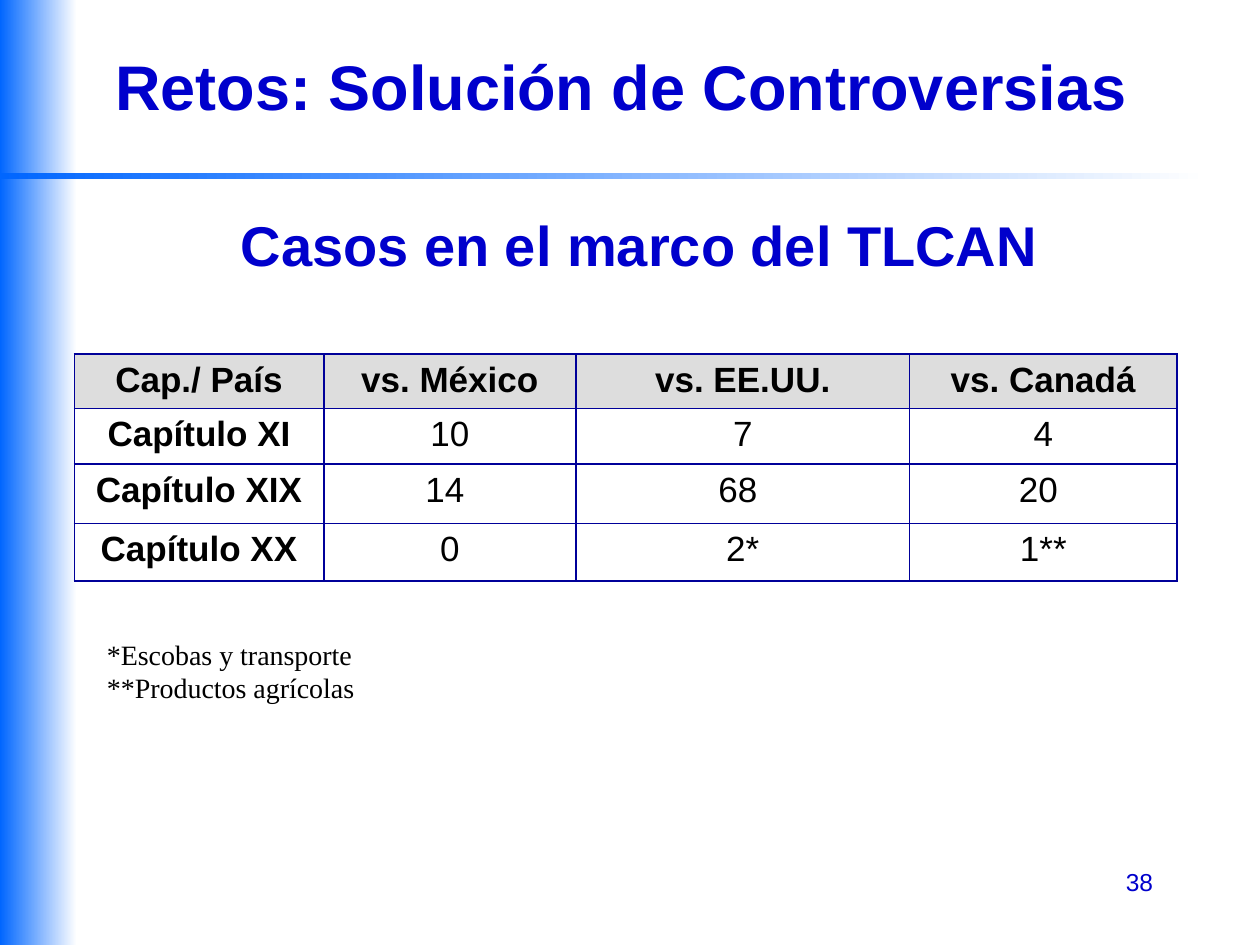
from dataclasses import dataclass

from lxml.etree import SubElement
from pptx import Presentation
from pptx.dml.color import RGBColor
from pptx.enum.shapes import MSO_SHAPE
from pptx.enum.text import MSO_ANCHOR, PP_ALIGN
from pptx.oxml.ns import qn
from pptx.util import Inches, Pt


@dataclass(frozen=True)
class Theme:
    accent: str = "0066FF"
    paper: str = "FFFFFF"
    heading: str = "0000CC"
    ink: str = "000000"
    header_fill: str = "DDDDDD"
    border: str = "000099"
    sans: str = "Arial"
    serif: str = "Times New Roman"
    title_size: int = 36
    subtitle_size: int = 32
    table_size: int = 20
    note_size: int = 16
    number_size: int = 14


THEME = Theme()

COLUMN_WIDTHS = (1.98, 2, 2.65, 2.12)
ROW_HEIGHTS = (0.42, 0.44, 0.47, 0.46)
CASES = (
    ("Cap./ País", "vs. México", "vs. EE.UU.", "vs. Canadá"),
    ("Capítulo XI", "10", "7", "4"),
    ("Capítulo XIX", "14 ", "68 ", "20 "),
    ("Capítulo XX", "0", "2*", "1**"),
)


def inches(box):
    return [Inches(length) for length in box]


def format_text(text_frame, size, color, font=THEME.sans, bold=False, align=PP_ALIGN.LEFT):
    for paragraph in text_frame.paragraphs:
        paragraph.alignment = align
        for run in paragraph.runs:
            run.font.name = font
            run.font.size = Pt(size)
            run.font.bold = bold
            run.font.color.rgb = RGBColor.from_string(color)


def add_text(slide, box, text, size, color, anchor=MSO_ANCHOR.TOP, wrap=True, **style):
    text_frame = slide.shapes.add_textbox(*inches(box)).text_frame
    text_frame.word_wrap = wrap
    text_frame.vertical_anchor = anchor
    text_frame.text = text
    format_text(text_frame, size, color, **style)


def add_gradient_bar(slide, box):
    bar = slide.shapes.add_shape(MSO_SHAPE.RECTANGLE, *inches(box))
    bar.shadow.inherit = False
    bar.line.fill.background()
    bar.fill.gradient()
    bar.fill.gradient_angle = 0
    for stop, color in zip(bar.fill.gradient_stops, (THEME.accent, THEME.paper)):
        stop.color.rgb = RGBColor.from_string(color)


def add_borders(cell):
    properties = cell._tc.get_or_add_tcPr()
    for side in ("a:lnL", "a:lnR", "a:lnT", "a:lnB"):
        line = SubElement(properties, qn(side), w=str(Pt(1)))
        fill = SubElement(line, qn("a:solidFill"))
        SubElement(fill, qn("a:srgbClr"), val=THEME.border)


def add_cases_table(slide, box):
    table = slide.shapes.add_table(len(CASES), len(COLUMN_WIDTHS), *inches(box)).table
    for column, width in zip(table.columns, COLUMN_WIDTHS):
        column.width = Inches(width)
    for row, height in zip(table.rows, ROW_HEIGHTS):
        row.height = Inches(height)

    for row_index, values in enumerate(CASES):
        for column_index, value in enumerate(values):
            cell = table.cell(row_index, column_index)
            is_header = row_index == 0
            add_borders(cell)
            if is_header:
                cell.fill.solid()
                cell.fill.fore_color.rgb = RGBColor.from_string(THEME.header_fill)
            else:
                cell.fill.background()
            cell.text_frame.text = value
            format_text(cell.text_frame, THEME.table_size, THEME.ink,
                        bold=is_header or column_index == 0, align=PP_ALIGN.CENTER)


def main():
    presentation = Presentation()
    presentation.slide_width = Inches(10)
    presentation.slide_height = Inches(7.5)
    slide = presentation.slides.add_slide(presentation.slide_layouts[6])

    # Side band and rule under the title
    add_gradient_bar(slide, (0, 0, 0.61, 7.5))
    add_gradient_bar(slide, (0, 1.37, 9.58, 0.05))

    # Headings
    add_text(slide, (0, 0.08, 10, 1.2), "Retos: Solución de Controversias ",
             THEME.title_size, THEME.heading, anchor=MSO_ANCHOR.MIDDLE,
             bold=True, align=PP_ALIGN.CENTER)
    add_text(slide, (0.43, 1.62, 9.29, 0.63), "Casos en el marco del TLCAN",
             THEME.subtitle_size, THEME.heading, bold=True, align=PP_ALIGN.CENTER)

    # Cases and their footnotes
    add_cases_table(slide, (0.59, 2.81, sum(COLUMN_WIDTHS), sum(ROW_HEIGHTS)))
    add_text(slide, (0.75, 5.01, 2.18, 0.64),
             "*Escobas y transporte\n**Productos agrícolas",
             THEME.note_size, THEME.ink, wrap=False, font=THEME.serif)

    # Page number
    add_text(slide, (7.17, 6.83, 2.08, 0.5), "38",
             THEME.number_size, THEME.heading, align=PP_ALIGN.RIGHT)

    presentation.save("out.pptx")


if __name__ == "__main__":
    main()
